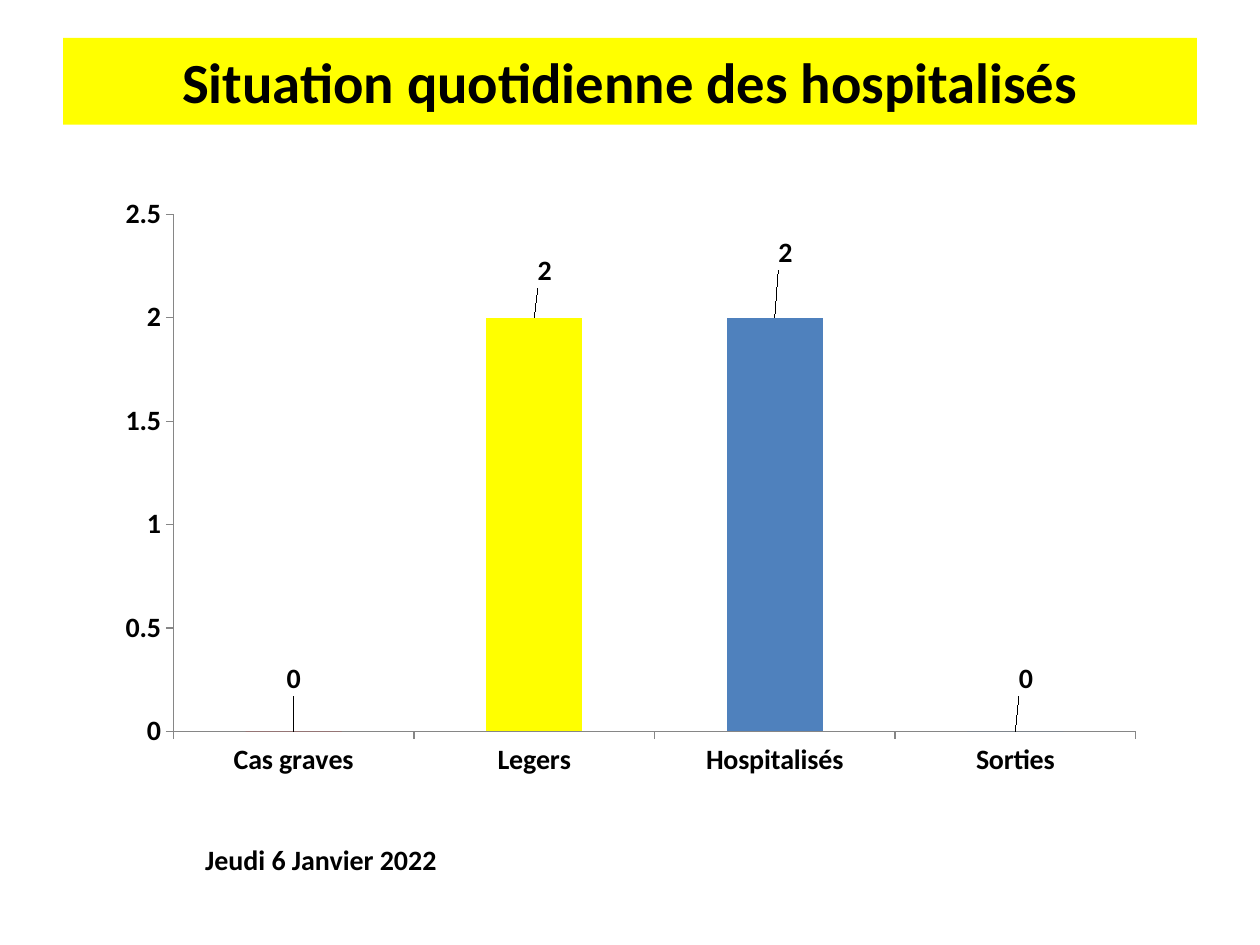
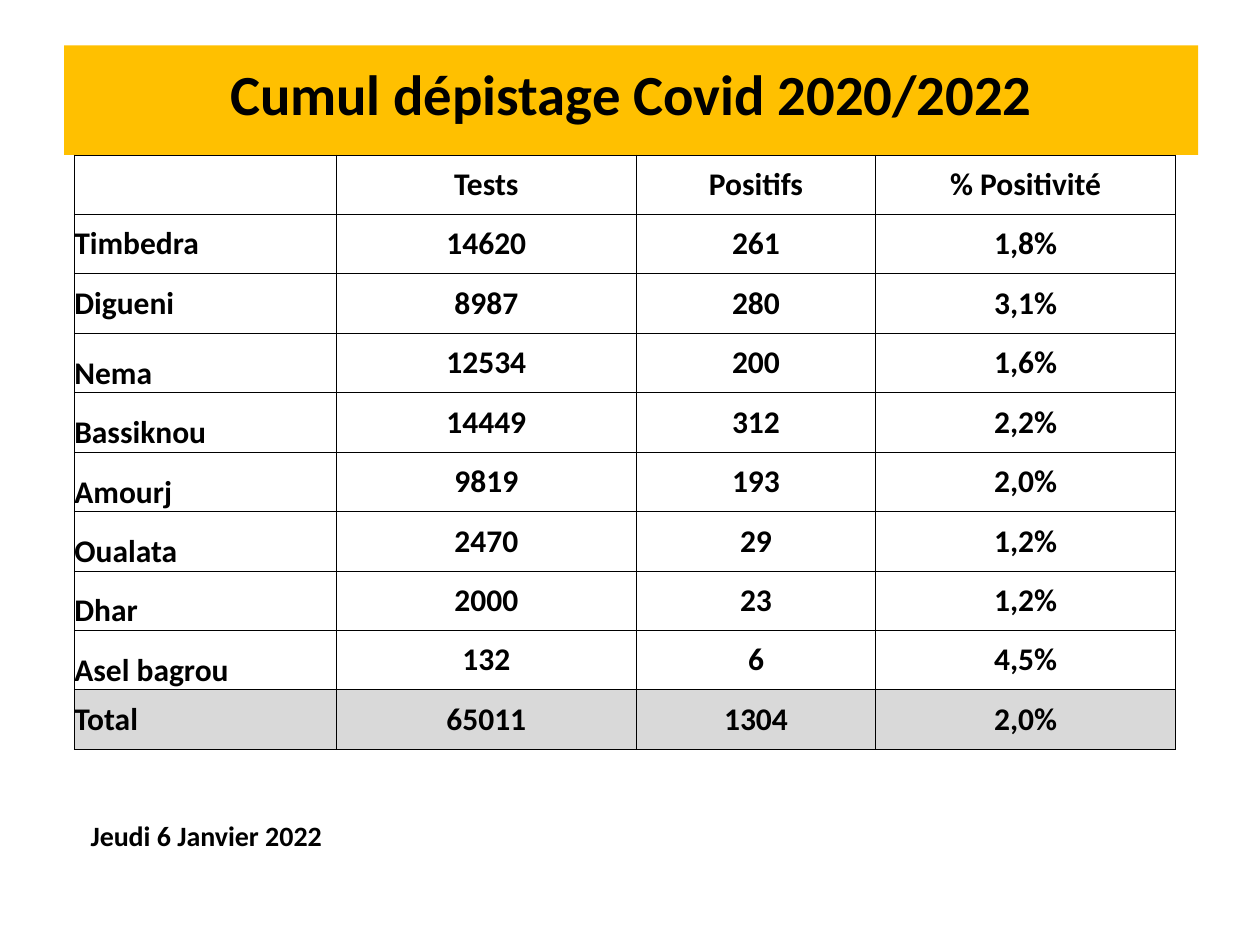
from lxml import etree
from pptx import Presentation
from pptx.chart.data import CategoryChartData
from pptx.dml.color import RGBColor
from pptx.enum.chart import XL_CHART_TYPE, XL_LABEL_POSITION, XL_TICK_MARK
from pptx.enum.text import MSO_ANCHOR, PP_ALIGN
from pptx.oxml import parse_xml
from pptx.oxml.ns import nsdecls, qn
from pptx.util import Inches, Pt

COLUMNS = XL_CHART_TYPE.COLUMN_CLUSTERED
LABEL_ABOVE = XL_LABEL_POSITION.OUTSIDE_END
TICK_OUT = XL_TICK_MARK.OUTSIDE
MIDDLE, BOTTOM = MSO_ANCHOR.MIDDLE, MSO_ANCHOR.BOTTOM
LEFT, CENTER = PP_ALIGN.LEFT, PP_ALIGN.CENTER

FONT = "Calibri"
BLACK, GREY, AXIS_GREY = "000000", "D9D9D9", "868686"
RED, YELLOW, BLUE, AMBER = "FF0000", "FFFF00", "4F81BD", "FFC000"
DATE = "Jeudi 6 Janvier 2022"


def color(hex_string):
    return RGBColor.from_string(hex_string)


def set_font(font, size):
    font.name = FONT
    font.size = Pt(size)
    font.bold = True
    font.color.rgb = color(BLACK)


deck = Presentation()
deck.slide_width, deck.slide_height = Inches(10), Inches(7.5)

# Title bands and dates of both slides
# title, band colour, band (left, top, height), bottom inset, date (left, top)
slide_specs = [
    ("Situation quotidienne des hospitalisés", YELLOW,
     (0.5, 0.3, 0.69), 0.05, (1.53, 6.64)),
    ("Cumul dépistage Covid 2020/2022", AMBER,
     (0.51, 0.36, 0.87), 0.17, (0.62, 6.45)),
]
pages = []
for title, band_color, (left, top, height), inset, date_place in slide_specs:
    page = deck.slides.add_slide(deck.slide_layouts[5])
    pages.append(page)

    band = page.shapes.title
    band.left, band.top = Inches(left), Inches(top)
    band.width, band.height = Inches(9), Inches(height)
    band.fill.solid()
    band.fill.fore_color.rgb = color(band_color)
    frame = band.text_frame
    frame.text = title
    frame.vertical_anchor = MIDDLE
    frame.margin_bottom = Inches(inset)
    frame.paragraphs[0].alignment = CENTER
    set_font(frame.paragraphs[0].font, 32.4)

    date_left, date_top = date_place
    box = page.shapes.add_textbox(Inches(date_left), Inches(date_top),
                                  Inches(5.59), Inches(0.37))
    box.text_frame.word_wrap = True
    box.text_frame.text = DATE
    set_font(box.text_frame.paragraphs[0].font, 16)

chart_page, table_page = pages

# Column chart of the patients
chart_data = CategoryChartData()
chart_data.categories = ["Cas graves", "Legers", "Hospitalisés", "Sorties"]
chart_data.add_series("Series 1", [0, 2, 2, 0])
chart = chart_page.shapes.add_chart(COLUMNS, Inches(0.83), Inches(1.47),
                                    Inches(8.35), Inches(4.8), chart_data).chart
chart.has_legend = False
chart.has_title = False
set_font(chart.font, 16)

for axis in (chart.category_axis, chart.value_axis):
    axis.has_major_gridlines = False
    axis.major_tick_mark = TICK_OUT
    axis.format.line.color.rgb = color(AXIS_GREY)
chart.value_axis.minimum_scale = 0
chart.value_axis.maximum_scale = 2.5
chart.value_axis.major_unit = 0.5

plot = chart.plots[0]
plot.gap_width = 150
plot.vary_by_categories = False
plot.has_data_labels = True
plot.data_labels.show_value = True
patients = plot.series[0]
patients.format.fill.solid()
patients.format.fill.fore_color.rgb = color(BLUE)
for index, point_color in enumerate([RED, YELLOW]):
    point_fill = patients.points[index].format.fill
    point_fill.solid()
    point_fill.fore_color.rgb = color(point_color)

# Value labels, shifted by fractions of the chart size
label_shifts = [(0, -0.05), (0.01, -0.04), (0.01, -0.07), (0.01, -0.05)]
for index in range(len(label_shifts)):
    patients.points[index].data_label.position = LABEL_ABOVE
labels = patients._element.iter(qn("c:dLbl"))
for label, (shift_x, shift_y) in zip(labels, label_shifts):
    layout = parse_xml(
        f'<c:layout {nsdecls("c")}><c:manualLayout><c:x val="{shift_x}"/>'
        f'<c:y val="{shift_y}"/></c:manualLayout></c:layout>')
    label.find(qn("c:idx")).addnext(layout)

# Table of the screening tests
rows = [
    ("", "Tests", "Positifs", "% Positivité"),
    ("Timbedra", "14620", "261", "1,8%"),
    ("Digueni", "8987", "280", "3,1%"),
    ("Nema", "12534", "200", "1,6%"),
    ("Bassiknou", "14449", "312", "2,2%"),
    ("Amourj", "9819", "193", "2,0%"),
    ("Oualata", "2470", "29", "1,2%"),
    ("Dhar", "2000", "23", "1,2%"),
    ("Asel bagrou", "132", "6", "4,5%"),
    ("Total", "65011", "1304", "2,0%"),
]
column_widths = [2.08, 2.38, 1.9, 2.38]
low_names = range(3, 9)
total_row = len(rows) - 1

table = table_page.shapes.add_table(len(rows), len(column_widths), Inches(0.59),
                                    Inches(1.23), Inches(8.74), Inches(4.72)).table
table.first_row = False
table.horz_banding = False
for column, width in zip(table.columns, column_widths):
    column.width = Inches(width)

for row_index, texts in enumerate(rows):
    for column_index, text in enumerate(texts):
        is_name = column_index == 0
        cell = table.cell(row_index, column_index)
        cell.text = text
        cell.margin_left = cell.margin_right = 0
        cell.margin_top = cell.margin_bottom = 0
        cell.vertical_anchor = BOTTOM if is_name and row_index in low_names else MIDDLE
        para = cell.text_frame.paragraphs[0]
        para.alignment = LEFT if is_name else CENTER
        set_font(para.font, 18)

        # Borders come before the fill in the cell properties
        properties = cell._tc.get_or_add_tcPr()
        for side in ("lnL", "lnR", "lnT", "lnB"):
            border = etree.SubElement(properties, qn(f"a:{side}"), w=str(Pt(0.5)))
            border_fill = etree.SubElement(border, qn("a:solidFill"))
            etree.SubElement(border_fill, qn("a:srgbClr"), val=BLACK)
        if row_index == total_row:
            cell.fill.solid()
            cell.fill.fore_color.rgb = color(GREY)
        else:
            cell.fill.background()

deck.save("out.pptx")
